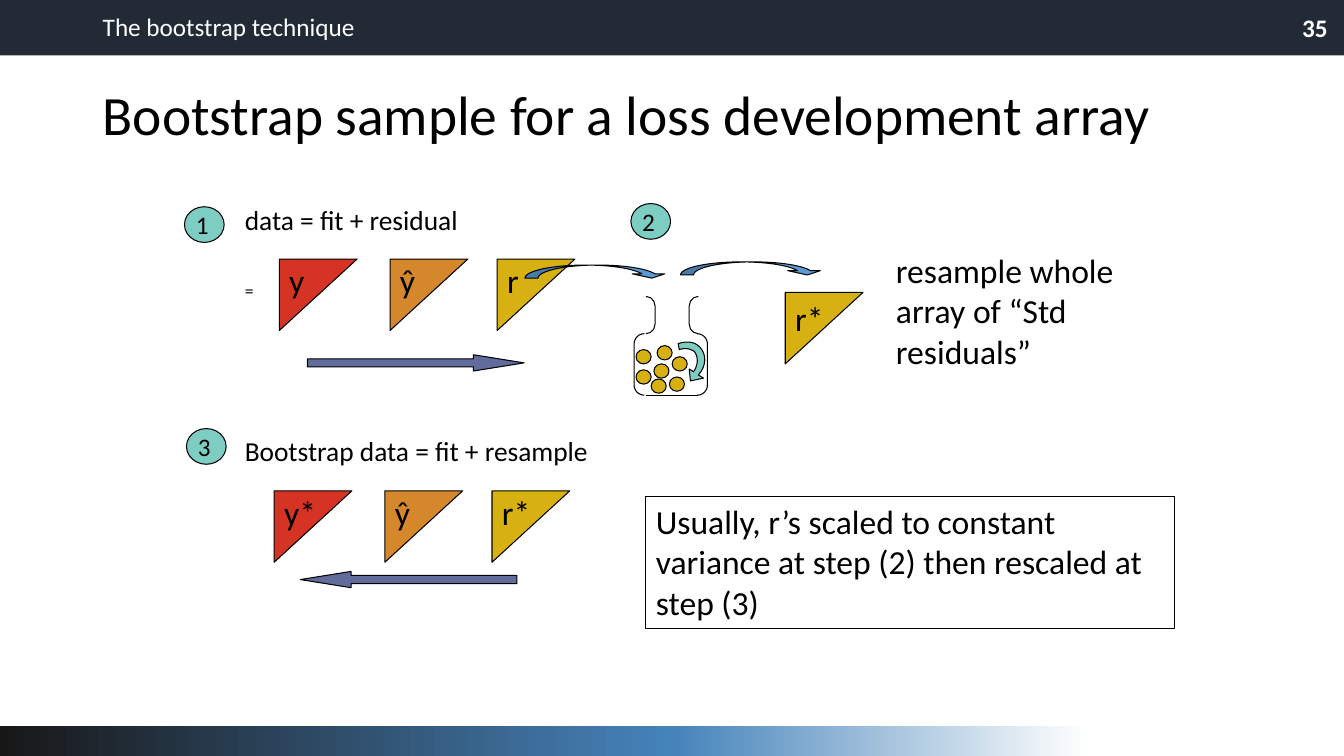
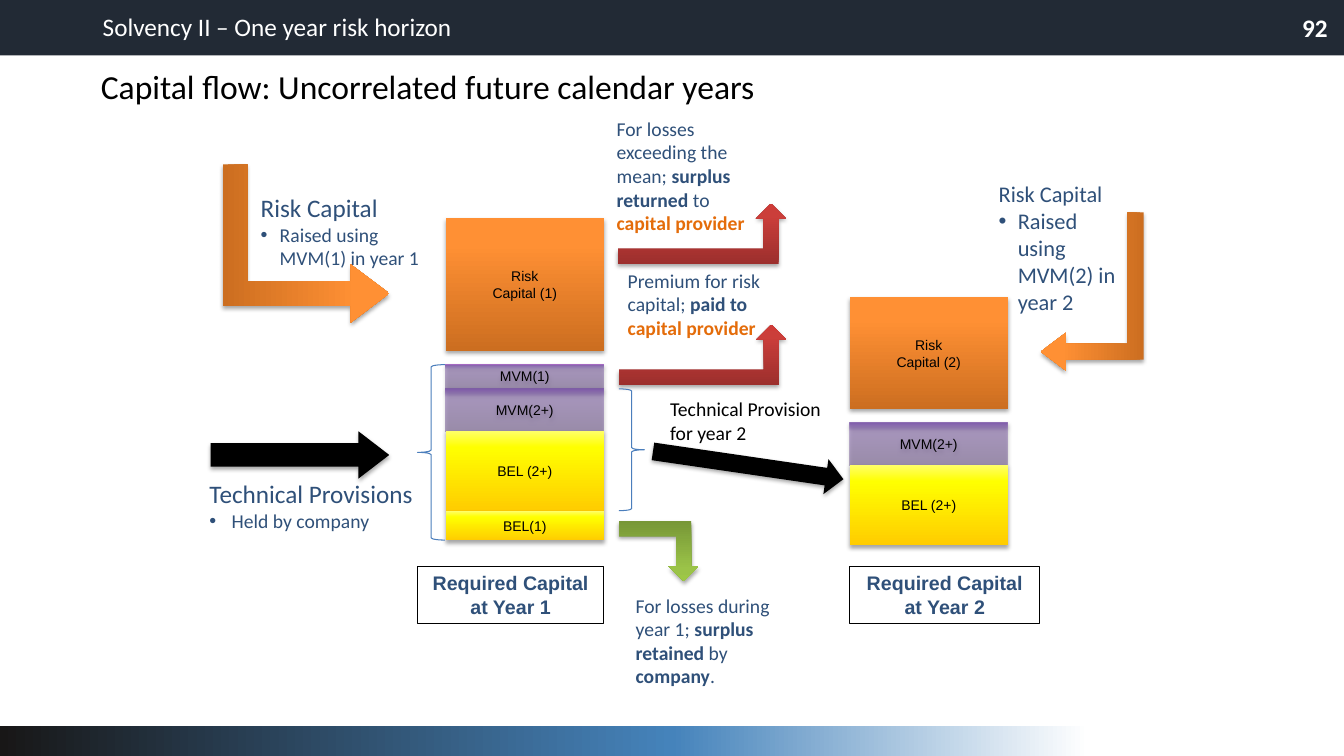
from lxml.etree import SubElement
from pptx import Presentation
from pptx.dml.color import RGBColor
from pptx.enum.shapes import MSO_CONNECTOR, MSO_SHAPE
from pptx.enum.text import MSO_ANCHOR, PP_ALIGN
from pptx.oxml.ns import qn
from pptx.util import Cm, Pt

COLORS = {
    "black": "000000", "white": "FFFFFF", "band": "222A35", "red": "D53424",
    "orange": "D5872B", "gold": "D7B012", "teal": "7ECDC3", "violet": "616B9C",
    "blue": "5B9BD5", "navy": "2F5079", "brace": "4B7EBC", "accent": "E46C0A",
}
GRADIENTS = {
    "footer": (0, [(0, "181717", 100), (50, "4583BB", 100), (81, "FFFFFF", 100)]),
    "capital": (90, [(0, "CC6E20", 100), (80, "FF9034", 100), (100, "FF9136", 100)]),
    "margin": (90, [(0, "5F4480", 50), (80, "7B58A6", 50), (100, "7C57A8", 100)]),
    "estimate": (90, [(0, "FFCC00", 100), (80, "FFFF00", 100), (100, "FFFF66", 100)]),
    "outflow": (90, [(0, "9C2F2D", 100), (80, "CB3E3A", 100), (100, "CE3B37", 100)]),
    "retained": (90, [(0, "779737", 100), (80, "9BC348", 100), (100, "9DC746", 100)]),
}

BADGES = [("1", 4.65, 5.21), ("2", 15.9, 5.13), ("3", 4.7, 10.8)]
STEP_TEXTS = [
    ("data = fit + residual", 5.08, 19.6),
    ("=", 6.99, 12.6),
    ("Bootstrap data = fit + resample", 10.9, 19.6),
]
TRIANGLE_ROWS = [(7.04, 6.53, ["y", "ŷ", "r"]), (6.91, 12.37, ["y*", "ŷ", "r*"])]
TRIANGLE_OFFSETS = [(0, "red"), (2.79, "orange"), (5.49, "gold")]
CURVED_ARROWS = [(13.23, 6.68), (17.15, 6.6)]
FAT_ARROWS = [(7.75, 8.94, ""), (7.57, 14.4, "H")]
FLASK_NECK = [(17.37, ""), (16.28, "H")]
MARBLES = [(16.03, 8.81), (16.48, 9.17), (16.03, 9.32), (16.56, 8.71),
           (16.94, 8.99), (16.87, 9.5), (16.41, 9.55)]
STIR_START = (17.48, 9.37)
STIR_SEGMENTS = [
    [(17.6, 9.19), (17.6, 8.99), (17.5, 8.86)],
    [(17.4, 8.79), (17.27, 8.76), (17.12, 8.81)],
    [(17.09, 8.66)],
    [(17.3, 8.59), (17.5, 8.61), (17.63, 8.74)],
    [(17.81, 8.92), (17.81, 9.22), (17.6, 9.45)],
    [(17.73, 9.53)], [(17.4, 9.6)], [(17.37, 9.3)],
]

COLUMN_WIDTH = 3.99
COLUMN_GAP = 0.34
COLUMNS = [
    (11.23, 5.49, [(["Risk", "Capital (1)"], 3.35, "capital"), (["MVM(1)"], 0.61, "margin"),
                   (["MVM(2+)"], 1.08, "margin"), (["BEL (2+)"], 2.01, "estimate"),
                   (["BEL(1)"], 0.74, "estimate")]),
    (21.41, 7.49, [(["Risk", "Capital (2)"], 2.82, "capital"), (["MVM(2+)"], 1.08, "margin"),
                   (["BEL (2+)"], 2.01, "estimate")]),
]
CAPTIONS = [("Required Capital at Year 1", 10.52, 4.7), ("Required Capital at Year 2", 21.41, 4.8)]
WIDE_BEND = (0.156, 0.184, 0.244)
FLOW_ARROWS = [
    (MSO_SHAPE.RIGHT_ARROW, (5.31, 10.87, 4.5, 1.19), "black", (0.5, 0.651), "", 0),
    (MSO_SHAPE.RIGHT_ARROW, (16.43, 11.28, 4.85, 0.89), "black", (), "", 8.3),
    (MSO_SHAPE.BENT_UP_ARROW, (5.72, 4.04, 3.99, 4.19), "capital", WIDE_BEND, "", 90),
    (MSO_SHAPE.BENT_UP_ARROW, (25.53, 6.05, 3.99, 2.59), "capital", WIDE_BEND, "H", 270),
    (MSO_SHAPE.BENT_UP_ARROW, (15.6, 13.13, 2.01, 1.52), "retained", (), "V", 0),
    (MSO_SHAPE.BENT_UP_ARROW, (15.57, 5.13, 4.24, 1.52), "outflow", (), "", 0),
    (MSO_SHAPE.BENT_UP_ARROW, (15.6, 8.18, 4.22, 1.52), "outflow", (), "", 0),
]
BRACES = [(MSO_SHAPE.LEFT_BRACE, (10.52, 9.19, 0.69, 4.42)),
          (MSO_SHAPE.RIGHT_BRACE, (15.6, 9.8, 0.64, 3.07))]
BULLET_NOTES = [
    ((5.03, 11.94, 6.2, 1.63), "Technical Provisions", 18, "Held by company", 14, 0.56),
    ((6.32, 4.72, 5, 2.24), "Risk Capital", 18, "Raised using MVM(1) in year 1", 14, 0.48),
    ((24.92, 4.42, 3.61, 3.68), "Risk Capital", 16, "Raised using MVM(2) in year 2", 16, 0.48),
]
FLOW_NOTES = [
    ((15.77, 14.83, 4.83, 2.64), "navy",
     [("For losses during year 1; ",), ("surplus retained", "navy"), (" by ",),
      ("company", "navy"), (".",)]),
    ((15.29, 2.82, 3.84, 3.25), "navy",
     [("For losses exceeding the mean; ",), ("surplus returned", "navy"), (" to ",),
      ("capital provider", "accent")]),
    ((15.57, 6.65, 3.84, 2.64), "navy",
     [("Premium for risk capital; ",), ("paid to ", "navy"), ("capital provider", "accent")]),
    ((16.64, 9.88, 4.8, 1.45), "black", [("Technical Provision for year 2",)]),
]


def rgb(name):
    return RGBColor.from_string(COLORS[name])


def style_paragraph(paragraph, size, color="black", font="Calibri", bold=False,
                    align=PP_ALIGN.LEFT, spacing=None, bullet_indent=None):
    paragraph.alignment = align
    if spacing:
        paragraph.line_spacing = spacing
    if bullet_indent:
        properties = paragraph._p.get_or_add_pPr()
        properties.set("marL", str(Cm(bullet_indent)))
        properties.set("indent", str(-Cm(bullet_indent)))
        SubElement(properties, qn("a:buFont"), typeface="Arial")
        SubElement(properties, qn("a:buChar"), char="•")
    paragraph.font.size = Pt(size)
    paragraph.font.name = font
    paragraph.font.bold = bold
    paragraph.font.color.rgb = rgb(color)


def write_lines(frame, lines, size, anchor=MSO_ANCHOR.TOP, **style):
    frame.word_wrap = True
    frame.vertical_anchor = anchor
    for index, line in enumerate(lines):
        paragraph = frame.add_paragraph() if index else frame.paragraphs[0]
        paragraph.text = line
        style_paragraph(paragraph, size, **style)


def add_text(slide, box, lines, size, **style):
    frame = slide.shapes.add_textbox(*map(Cm, box)).text_frame
    write_lines(frame, lines, size, **style)
    return frame


def apply_gradient(shape, name):
    angle, stops = GRADIENTS[name]
    shape.fill.gradient()
    shape.fill.gradient_angle = angle
    stop_list = shape.element.spPr.find(qn("a:gradFill")).find(qn("a:gsLst"))
    for stop in list(stop_list):
        stop_list.remove(stop)
    for position, color, opacity in stops:
        stop = SubElement(stop_list, qn("a:gs"), pos=str(position * 1000))
        value = SubElement(stop, qn("a:srgbClr"), val=color)
        if opacity < 100:
            SubElement(value, qn("a:alpha"), val=str(opacity * 1000))


def paint(shape, fill=None, line=None, shadow=False):
    shape.shadow.inherit = False
    if fill in GRADIENTS:
        apply_gradient(shape, fill)
    elif fill:
        shape.fill.solid()
        shape.fill.fore_color.rgb = rgb(fill)
    else:
        shape.fill.background()
    if line:
        shape.line.color.rgb = rgb(line)
        shape.line.width = Pt(0.75)
    else:
        shape.line.fill.background()
    if shadow:
        effects = shape.element.spPr.find(qn("a:effectLst"))
        outer = SubElement(effects, qn("a:outerShdw"), blurRad=str(Pt(3.1)), dist=str(Pt(1.8)),
                           dir="5400000", rotWithShape="0")
        SubElement(SubElement(outer, qn("a:srgbClr"), val="000000"), qn("a:alpha"), val="35000")


def add_figure(slide, kind, box, fill=None, line=None, adjustments=(), flip="", rotation=0,
               shadow=False):
    shape = slide.shapes.add_shape(kind, *map(Cm, box))
    paint(shape, fill, line, shadow)
    for index, value in enumerate(adjustments):
        shape.adjustments[index] = value
    shape.rotation = rotation
    if flip:
        shape.element.spPr.find(qn("a:xfrm")).set("flip" + flip, "1")
    return shape


def add_base(presentation, section, number, title, title_box, title_size):
    slide = presentation.slides.add_slide(presentation.slide_layouts[6])
    add_figure(slide, MSO_SHAPE.RECTANGLE, (0, 0, 33.87, 1.4), "band")
    add_figure(slide, MSO_SHAPE.RECTANGLE, (0, 18.29, 33.87, 0.76), "footer")
    add_text(slide, (2.34, 0.15, 18.44, 1.02), [section], 18, color="white")
    add_text(slide, (26.09, 0.18, 7.62, 1.02), [number], 18, color="white", bold=True,
             align=PP_ALIGN.RIGHT)
    add_text(slide, title_box, [title], title_size, spacing=0.9, anchor=MSO_ANCHOR.MIDDLE)
    return slide


def add_triangle(slide, left, top, label, fill, label_rise=0.1):
    add_figure(slide, MSO_SHAPE.RIGHT_TRIANGLE, (left, top, 1.96, 1.8), fill, "black", flip="V")
    add_text(slide, (left, top - label_rise, 1.6, 1.27), [label], 24)


def curve_points(start, controls, steps=8):
    first, second, end = controls
    for step in range(1, steps + 1):
        t = step / steps
        u = 1 - t
        yield tuple(u**3 * a + 3 * u * u * t * b + 3 * u * t * t * c + t**3 * d
                    for a, b, c, d in zip(start, first, second, end))


def add_stir_arrow(slide):
    points = [STIR_START]
    for segment in STIR_SEGMENTS:
        points += segment if len(segment) == 1 else curve_points(points[-1], segment)
    outline = [(Cm(x), Cm(y)) for x, y in points]
    builder = slide.shapes.build_freeform(*outline[0])
    builder.add_line_segments(outline[1:], close=True)
    paint(builder.convert_to_shape(), "teal", "black")


def add_flask(slide):
    add_figure(slide, MSO_SHAPE.DOUBLE_BRACKET, (15.98, 8.41, 1.85, 1.55), line="black",
               adjustments=[0.167])
    for left, flip in FLASK_NECK:
        add_figure(slide, MSO_SHAPE.LEFT_BRACKET, (left, 7.47, 0.23, 0.94), line="black",
                   adjustments=[1.05], flip=flip)
    base = slide.shapes.add_connector(MSO_CONNECTOR.STRAIGHT, Cm(16.28), Cm(9.96),
                                      Cm(17.58), Cm(9.96))
    base.line.color.rgb = rgb("black")
    base.line.width = Pt(0.75)
    SubElement(base.element.spPr, qn("a:effectLst"))
    for left, top in MARBLES:
        add_figure(slide, MSO_SHAPE.OVAL, (left, top, 0.38, 0.36), "gold", "black")
    add_stir_arrow(slide)


def build_bootstrap(presentation):
    slide = add_base(presentation, "The bootstrap technique", "35",
                     "Bootstrap sample for a loss development array",
                     (2.34, 1.88, 29.21, 2.18), 39.6)
    for text, top, size in STEP_TEXTS:
        add_text(slide, (5.92, top, 10, 1), [text], size, spacing=0.9)
    for left, top, labels in TRIANGLE_ROWS:
        for label, (offset, fill) in zip(labels, TRIANGLE_OFFSETS):
            add_triangle(slide, left + offset, top, label, fill)
    add_triangle(slide, 19.79, 7.37, "r*", "gold", label_rise=0)
    for left, top in CURVED_ARROWS:
        add_figure(slide, MSO_SHAPE.CURVED_DOWN_ARROW, (left, top, 3.61, 0.33), "blue", "black",
                   adjustments=(1.246, 2.492, 0.333))
    add_flask(slide)
    for left, top, flip in FAT_ARROWS:
        add_figure(slide, MSO_SHAPE.RIGHT_ARROW, (left, top, 5.46, 0.41), "violet", "black",
                   adjustments=(0.5, 3.115), flip=flip)
    for number, left, top in BADGES:
        badge = add_figure(slide, MSO_SHAPE.OVAL, (left, top, 1, 0.9), "teal", "black")
        frame = badge.text_frame
        frame.margin_left = Cm(0.14)
        frame.margin_right = frame.margin_top = frame.margin_bottom = 0
        write_lines(frame, [number], 18, anchor=MSO_ANCHOR.MIDDLE)
    add_text(slide, (22.33, 6.17, 7.32, 3.33), ["resample whole array of “Std residuals”"], 24)
    remark = add_figure(slide, MSO_SHAPE.RECTANGLE, (16.28, 12.5, 13.31, 3.33), "white", "black")
    write_lines(remark.text_frame,
                ["Usually, r’s scaled to constant variance at step (2) then rescaled at step (3)"], 24)


def build_capital_flow(presentation):
    slide = add_base(presentation, "Solvency II – One year risk horizon", "92",
                     "Capital flow: Uncorrelated future calendar years",
                     (2.29, 1.14, 29.21, 2.18), 24)
    for left, top, blocks in COLUMNS:
        for lines, height, fill in blocks:
            block = add_figure(slide, MSO_SHAPE.RECTANGLE, (left, top, COLUMN_WIDTH, height), fill,
                               shadow=True)
            write_lines(block.text_frame, lines, 10, font="Arial", align=PP_ALIGN.CENTER,
                        anchor=MSO_ANCHOR.MIDDLE)
            top += height + (COLUMN_GAP if fill == "capital" else 0)
    for text, left, width in CAPTIONS:
        caption = add_figure(slide, MSO_SHAPE.RECTANGLE, (left, 14.27, width, 1.45), "white", "black")
        write_lines(caption.text_frame, [text], 14, color="navy", font="Arial", bold=True,
                    align=PP_ALIGN.CENTER)
    for kind, box, fill, adjustments, flip, rotation in FLOW_ARROWS:
        add_figure(slide, kind, box, fill, None, adjustments, flip, rotation, shadow=True)
    for kind, box in BRACES:
        add_figure(slide, kind, box, line="brace")
    for box, heading, heading_size, detail, detail_size, indent in BULLET_NOTES:
        frame = add_text(slide, box, [heading], heading_size, color="navy")
        paragraph = frame.add_paragraph()
        paragraph.text = detail
        style_paragraph(paragraph, detail_size, "navy", bullet_indent=indent)
    for box, color, runs in FLOW_NOTES:
        paragraph = add_text(slide, box, [""], 14, color=color).paragraphs[0]
        for text, *emphasis in runs:
            run = paragraph.add_run()
            run.text = text
            if emphasis:
                run.font.bold = True
                run.font.color.rgb = rgb(emphasis[0])


def main():
    presentation = Presentation()
    presentation.slide_width = Cm(33.87)
    presentation.slide_height = Cm(19.05)
    build_bootstrap(presentation)
    build_capital_flow(presentation)
    presentation.save("out.pptx")


if __name__ == "__main__":
    main()
